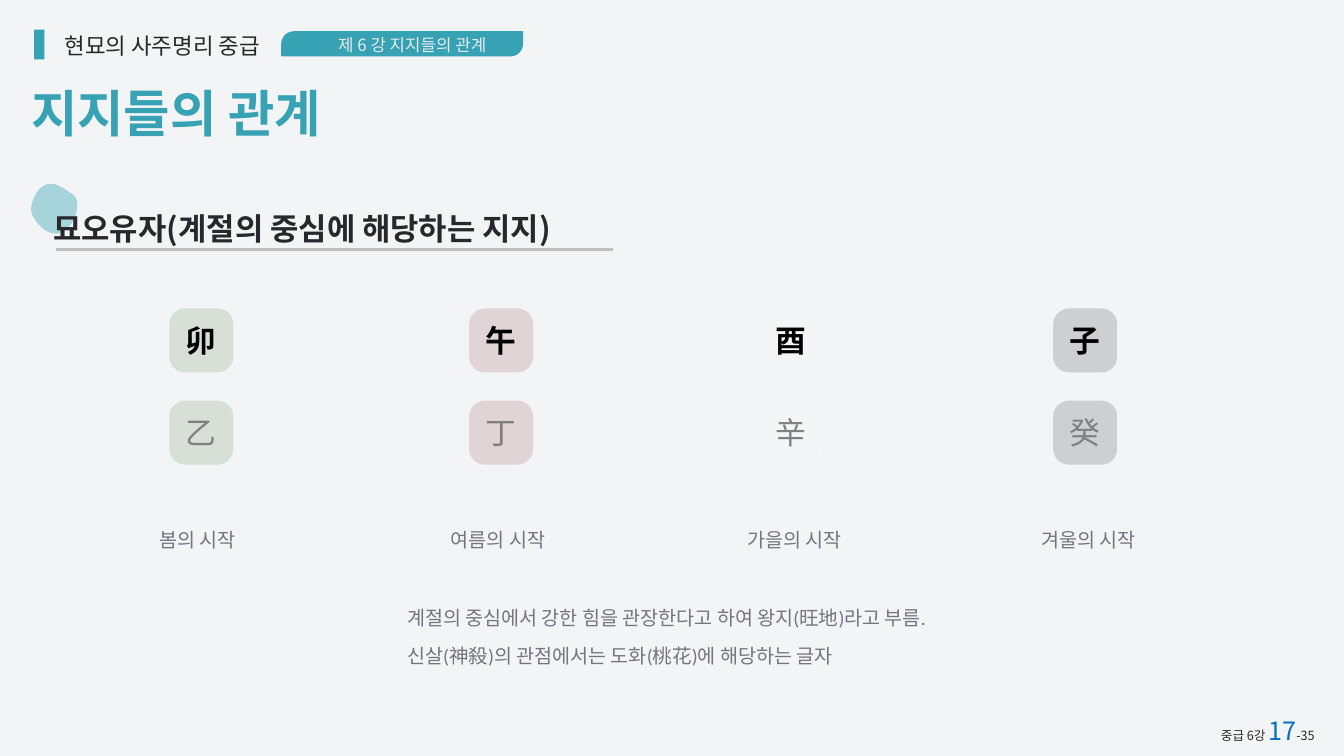
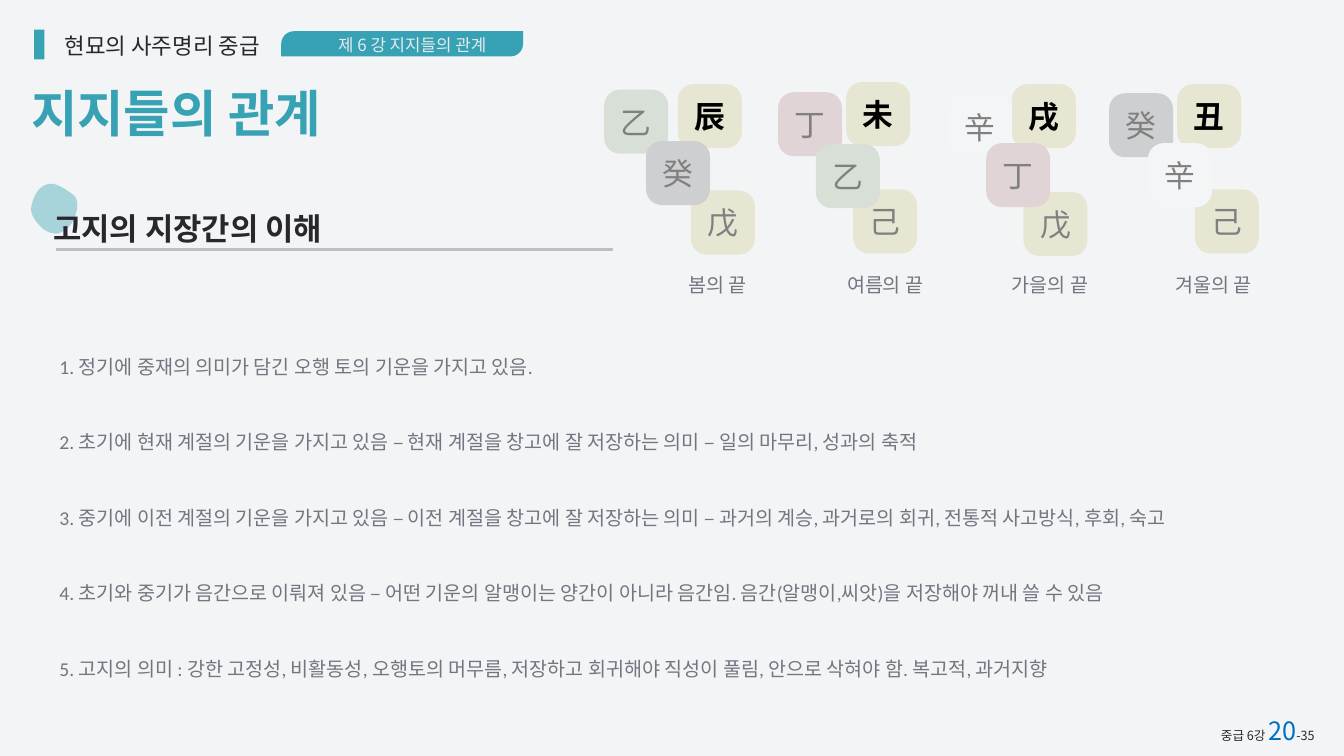
from dataclasses import dataclass

from lxml import etree
from pptx import Presentation
from pptx.dml.color import RGBColor
from pptx.enum import shapes, text
from pptx.oxml import ns
from pptx.util import Inches, Pt

COLORS = {
    "background": "F3F4F6", "teal": "36A2B4", "ink": "28282C", "pale": "E8EAEE",
    "body": "757581", "rule": "BFBFBF", "page": "0070C0",
    "branch": "000000", "stem": "808080",
    "wood": "D8DFD7", "fire": "E0D4D6", "earth": "E6E6D3",
    "metal": "F4F5F6", "water": "CECFD1",
}
ELEMENTS = {"wood": "卯乙", "fire": "午丁", "earth": "辰未戌丑戊己",
            "metal": "酉辛", "water": "子癸"}
BRANCHES = "卯午酉子辰未戌丑"
KOREAN, LATIN = "Noto Sans CJK KR", "Calibri"
TILE_SIZE = 1.27
LEFT, CENTER, JUSTIFY = (text.PP_ALIGN.LEFT, text.PP_ALIGN.CENTER,
                         text.PP_ALIGN.JUSTIFY)

# Bezier outline of the accent blob: start, then two controls and an end each
BLOB_START = (0.62, 4.19)
BLOB_CURVES = [
    ((0.61, 4.07), (0.66, 3.92), (0.76, 3.77)),
    ((0.84, 3.69), (0.94, 3.63), (1.06, 3.65)),
    ((1.18, 3.67), (1.39, 3.81), (1.48, 3.89)),
    ((1.56, 3.98), (1.55, 4.17), (1.46, 4.36)),
    ((1.40, 4.50), (1.27, 4.60), (1.16, 4.63)),
    ((1.06, 4.65), (0.91, 4.60), (0.82, 4.51)),
    ((0.74, 4.43), (0.64, 4.31), (0.62, 4.19)),
]


@dataclass
class Style:
    size: float
    color: str
    font: str = KOREAN
    bold: bool = False


@dataclass
class Box:
    left: float
    top: float
    width: float
    height: float

    def emu(self) -> list:
        return [Inches(v) for v in (self.left, self.top, self.width, self.height)]


@dataclass
class Tile:
    character: str
    left: float
    top: float


@dataclass
class Label:
    wording: str
    left: float
    width: float = 2.4


BODY = Style(28, "body", LATIN)


# Text and fill helpers
def rgb(name: str) -> RGBColor:
    return RGBColor.from_string(COLORS[name])


def add_run(paragraph, wording: str, style: Style) -> None:
    run = paragraph.add_run()
    run.text = wording
    font = run.font
    font.size, font.bold, font.name = Pt(style.size), style.bold, style.font
    font.color.rgb = rgb(style.color)
    east_asian = etree.SubElement(run._r.get_or_add_rPr(), ns.qn("a:ea"))
    east_asian.set("typeface", KOREAN)


def write(frame, lines: list, align=LEFT, wrap: bool = True,
          spacing: float | None = None, gap: float = 0) -> None:
    """Each line is a list of (wording, style) runs."""
    frame.word_wrap = wrap
    frame.auto_size = text.MSO_AUTO_SIZE.NONE
    for index, runs in enumerate(lines):
        paragraph = frame.add_paragraph() if index else frame.paragraphs[0]
        paragraph.alignment = align
        if spacing:
            paragraph.line_spacing = spacing
        if index and gap:
            paragraph.space_before = Pt(gap)
        for wording, style in runs:
            add_run(paragraph, wording, style)


def add_text(slide, box: Box, lines: list, **layout) -> None:
    write(slide.shapes.add_textbox(*box.emu()).text_frame, lines, **layout)


def add_body(slide, box: Box, lines: list, gap: float = 0) -> None:
    add_text(slide, box, [[(line, BODY)] for line in lines],
             align=JUSTIFY, spacing=1.6, gap=gap)


def paint(shape, color: str) -> None:
    shape.shadow.inherit = False
    shape.fill.solid()
    shape.fill.fore_color.rgb = rgb(color)
    shape.line.fill.background()


def add_filled(slide, kind, box: Box, color: str):
    shape = slide.shapes.add_shape(kind, *box.emu())
    paint(shape, color)
    return shape


# Shared parts
def add_blob(slide) -> None:
    points, start = [], BLOB_START
    steps = 10
    for first, second, end in BLOB_CURVES:
        for step in range(1, steps + 1):
            t = step / steps
            weights = ((1 - t) ** 3, 3 * t * (1 - t) ** 2, 3 * t * t * (1 - t), t ** 3)
            knots = (start, first, second, end)
            points.append(tuple(Inches(sum(w * k[axis] for w, k in zip(weights, knots)))
                                for axis in (0, 1)))
        start = end
    builder = slide.shapes.build_freeform(*(Inches(v) for v in BLOB_START))
    builder.add_line_segments(points, close=True)
    blob = builder.convert_to_shape()
    paint(blob, "teal")
    color = blob._element.spPr.find(ns.qn("a:solidFill"))[0]
    etree.SubElement(color, ns.qn("a:alpha")).set("val", "40000")


def add_header(slide) -> None:
    add_text(slide, Box(0.94, 0.58, 4.56, 0.64),
             [[("현묘의 사주명리 중급", Style(32, "ink"))]], align=CENTER, wrap=False)
    add_filled(slide, shapes.MSO_SHAPE.RECTANGLE, Box(0.68, 0.59, 0.2, 0.59), "teal")
    badge = add_filled(slide, shapes.MSO_SHAPE.ROUND_2_DIAG_RECTANGLE,
                       Box(5.58, 0.62, 4.8, 0.5), "teal")
    badge.adjustments[0], badge.adjustments[1] = 0.5, 0
    frame = badge.text_frame
    frame.margin_left, frame.margin_top, frame.margin_bottom = Inches(0.5), Inches(0.04), 0
    frame.vertical_anchor = text.MSO_ANCHOR.MIDDLE
    write(frame, [[("제 6 강 지지들의 관계", Style(24, "pale"))]], align=CENTER)


def add_rule(slide) -> None:
    rule = slide.shapes.add_connector(shapes.MSO_CONNECTOR.STRAIGHT, Inches(1.11),
                                      Inches(4.95), Inches(12.16), Inches(4.95))
    rule.line.color.rgb = rgb("rule")
    rule.line.width = Pt(3)
    etree.SubElement(rule._element.spPr, ns.qn("a:effectLst"))


def start_slide(prs, subtitle: str, page: str):
    slide = prs.slides.add_slide(prs.slide_layouts[5])
    title = slide.shapes.title
    title.left, title.top, title.width, title.height = Box(0.52, 1.57, 6.62, 1.31).emu()
    title.text_frame.vertical_anchor = text.MSO_ANCHOR.TOP
    write(title.text_frame, [[("지지들의 관계", Style(72, "teal", bold=True))]], wrap=False)
    add_header(slide)
    add_rule(slide)
    add_blob(slide)
    add_text(slide, Box(0.96, 4.11, 12, 0.84),
             [[(subtitle, Style(44, "ink", bold=True))]])
    small = Style(18, "ink")
    add_text(slide, Box(24.13, 14.14, 3.03, 0.71),
             [[("중급 6강 ", small), (page, Style(36, "page")), ("-35", small)]])
    return slide


def add_tile(slide, tile: Tile) -> None:
    element = next(name for name, members in ELEMENTS.items() if tile.character in members)
    shape = add_filled(slide, shapes.MSO_SHAPE.ROUNDED_RECTANGLE,
                       Box(tile.left, tile.top, TILE_SIZE, TILE_SIZE), element)
    shape.adjustments[0] = 0.246
    frame = shape.text_frame
    frame.margin_left = frame.margin_right = frame.margin_top = frame.margin_bottom = 0
    frame.vertical_anchor = text.MSO_ANCHOR.MIDDLE
    is_branch = tile.character in BRANCHES
    style = Style(44, "branch" if is_branch else "stem", bold=is_branch)
    write(frame, [[(tile.character, style)]], align=CENTER, wrap=False)


def add_labels(slide, labels: list, top: float) -> None:
    for label in labels:
        add_body(slide, Box(label.left, top, label.width, 0.77), [label.wording])


# Slide: the branches at the heart of each season
def build_season_centers(prs) -> None:
    slide = start_slide(prs, "묘오유자(계절의 중심에 해당하는 지지)", "17")
    add_labels(slide, [Label("봄의 시작", 3.06, 1.91), Label("여름의 시작", 8.85),
                       Label("가을의 시작", 14.73), Label("겨울의 시작", 20.57)], 10.15)
    add_body(slide, Box(7.98, 11.7, 12.36, 1.52), [
        "계절의 중심에서 강한 힘을 관장한다고 하여 왕지(旺地)라고 부름.",
        "신살(神殺)의 관점에서는 도화(桃花)에 해당하는 글자",
    ])
    for branch, stem, left in (("卯", "乙", 3.36), ("午", "丁", 9.31),
                               ("酉", "辛", 15.06), ("子", "癸", 20.9)):
        add_tile(slide, Tile(branch, left, 6.12))
        add_tile(slide, Tile(stem, left, 7.95))


# Slide: the stems hidden in the storage branches
def build_storage_branches(prs) -> None:
    slide = start_slide(prs, "고지의 지장간의 이해", "20")
    add_labels(slide, [Label("봄의 끝", 13.56, 1.91), Label("여름의 끝", 16.71),
                       Label("가을의 끝", 19.98), Label("겨울의 끝", 23.23)], 5.08)
    add_body(slide, Box(1.08, 6.71, 25.21, 6.82), [
        "1. 정기에 중재의 의미가 담긴 오행 토의 기운을 가지고 있음.",
        "2. 초기에 현재 계절의 기운을 가지고 있음 – 현재 계절을 창고에 잘 저장하는 의미"
        " – 일의 마무리, 성과의 축적",
        "3. 중기에 이전 계절의 기운을 가지고 있음 – 이전 계절을 창고에 잘 저장하는 의미"
        " – 과거의 계승, 과거로의 회귀, 전통적 사고방식, 후회, 숙고",
        "4. 초기와 중기가 음간으로 이뤄져 있음 – 어떤 기운의 알맹이는 양간이 아니라 음간임."
        " 음간(알맹이,씨앗)을 저장해야 꺼내 쓸 수 있음",
        "5. 고지의 의미 : 강한 고정성, 비활동성, 오행토의 머무름, 저장하고 회귀해야 직성이 풀림,"
        " 안으로 삭혀야 함. 복고적, 과거지향",
    ], gap=54)
    # Per season: branch, early stem, main stem, middle stem on top
    clusters = [
        [Tile("辰", 13.45, 1.67), Tile("乙", 11.99, 1.78),
         Tile("戊", 13.71, 3.78), Tile("癸", 12.82, 2.8)],
        [Tile("未", 16.79, 1.63), Tile("丁", 15.44, 1.83),
         Tile("己", 16.93, 3.76), Tile("乙", 16.19, 2.86)],
        [Tile("戌", 20.08, 1.67), Tile("辛", 18.81, 1.88),
         Tile("戊", 20.31, 3.81), Tile("丁", 19.57, 2.84)],
        [Tile("丑", 23.36, 1.67), Tile("癸", 22.01, 1.85),
         Tile("己", 23.71, 3.76), Tile("辛", 22.78, 2.84)],
    ]
    for cluster in clusters:
        for tile in cluster:
            add_tile(slide, tile)


def main() -> None:
    prs = Presentation()
    prs.slide_width, prs.slide_height = Inches(26.67), Inches(15)
    backdrop = prs.slide_master.background.fill
    backdrop.solid()
    backdrop.fore_color.rgb = rgb("background")
    build_season_centers(prs)
    build_storage_branches(prs)
    prs.save("out.pptx")


if __name__ == "__main__":
    main()
